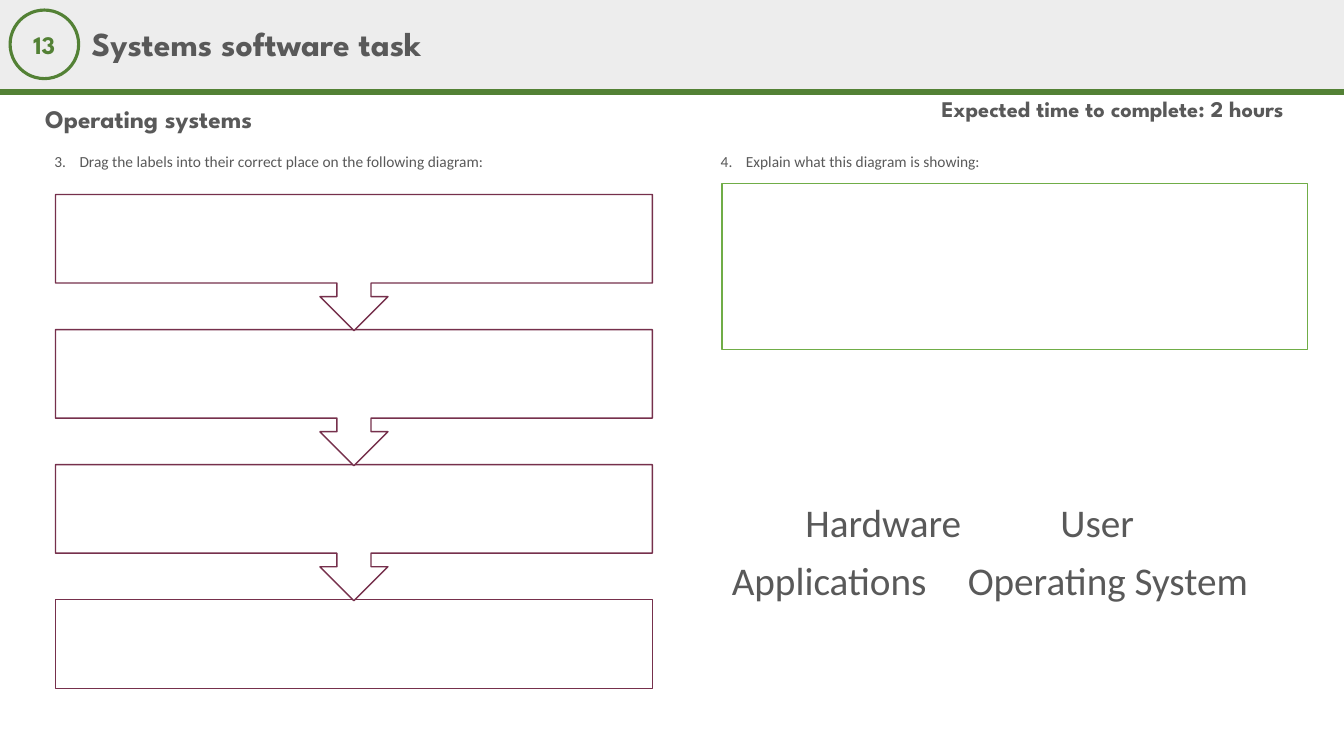
from lxml.etree import SubElement
from pptx import Presentation
from pptx.dml.color import RGBColor
from pptx.enum.shapes import MSO_CONNECTOR, MSO_SHAPE
from pptx.enum.text import MSO_ANCHOR, MSO_AUTO_SIZE, PP_ALIGN
from pptx.oxml.ns import qn
from pptx.util import Inches, Pt

COLOURS = {
    "band": "EDEDED",
    "green": "538135",
    "light green": "70AD47",
    "plum": "76304C",
    "white": "FFFFFF",
    "grey": "595959",
}
HEADING_FONT = "League Spartan"
BODY_FONT = "Calibri"


def colour(name):
    return RGBColor.from_string(COLOURS[name])


def style_text(paragraph, size, font, colour_name, bold=False):
    for span in paragraph.runs:
        span.font.size = Pt(size)
        span.font.name = font
        span.font.bold = bold
        span.font.color.rgb = colour(colour_name)


def add_panel(page, kind, left, top, width, height, fill=None, line=None, weight=1):
    panel = page.shapes.add_shape(
        kind, Inches(left), Inches(top), Inches(width), Inches(height)
    )
    panel.shadow.inherit = False
    if fill:
        panel.fill.solid()
        panel.fill.fore_color.rgb = colour(fill)
    else:
        panel.fill.background()
    if line:
        panel.line.color.rgb = colour(line)
        panel.line.width = Pt(weight)
    else:
        panel.line.fill.background()
    return panel


def add_rule(page, top, width):
    rule = page.shapes.add_connector(
        MSO_CONNECTOR.STRAIGHT, 0, Inches(top), Inches(width), Inches(top)
    )
    rule.line.color.rgb = colour("green")
    rule.line.width = Pt(4.5)
    SubElement(rule._element.spPr, qn("a:effectLst"))


def add_text(page, text, left, top, width, height, wrap=True):
    box = page.shapes.add_textbox(
        Inches(left), Inches(top), Inches(width), Inches(height)
    )
    box.text_frame.word_wrap = wrap
    box.text_frame.text = text
    return box.text_frame


def add_heading(page, text, left, top, width, height, size, anchor=MSO_ANCHOR.MIDDLE):
    frame = add_text(page, text, left, top, width, height)
    frame.vertical_anchor = anchor
    para = frame.paragraphs[0]
    para.line_spacing = 0.9
    style_text(para, size, HEADING_FONT, "grey", bold=True)


def add_question(page, number, text, left, width):
    frame = add_text(page, text, left, 1.46, width, 0.29)
    para = frame.paragraphs[0]
    properties = para._p.get_or_add_pPr()
    properties.set("marL", str(Inches(0.25)))
    properties.set("indent", str(-Inches(0.25)))
    SubElement(
        properties, qn("a:buAutoNum"), type="arabicPeriod", startAt=str(number)
    )
    style_text(para, 11, BODY_FONT, "grey")


def add_label(page, text, left, top, width):
    frame = add_text(page, text, left, top, width, 0.57, wrap=False)
    frame.auto_size = MSO_AUTO_SIZE.SHAPE_TO_FIT_TEXT
    style_text(frame.paragraphs[0], 28, BODY_FONT, "grey")


def add_badge(page, text):
    badge = add_panel(
        page, MSO_SHAPE.OVAL, 0.1, 0.1, 0.68, 0.68, line="green", weight=2.25
    )
    frame = badge.text_frame
    frame.margin_left = frame.margin_right = 0
    frame.vertical_anchor = MSO_ANCHOR.MIDDLE
    frame.text = text
    frame.paragraphs[0].alignment = PP_ALIGN.CENTER
    style_text(frame.paragraphs[0], 18, HEADING_FONT, "green", bold=True)


def add_layer_diagram(page, left, top, width, layers):
    pitch = 1.34
    last = layers - 1
    add_panel(page, MSO_SHAPE.RECTANGLE, left, top + last * pitch, width, 0.88,
              "white", "plum")
    for layer in reversed(range(last)):
        callout = add_panel(page, MSO_SHAPE.UP_ARROW_CALLOUT, left,
                            top + layer * pitch, width, 1.35, "white", "plum")
        callout.rotation = 180


def main():
    deck = Presentation()
    deck.slide_width = Inches(13.33)
    deck.slide_height = Inches(7.5)
    page = deck.slides.add_slide(deck.slide_layouts[6])

    add_panel(page, MSO_SHAPE.RECTANGLE, 0, 0, 13.33, 0.91, fill="band")
    add_rule(page, 0.91, 13.33)
    add_heading(page, "Expected time to complete: 2 hours", 9.24, 0.93, 4.09, 0.4,
                16, MSO_ANCHOR.TOP)
    add_badge(page, "13")
    add_heading(page, "Operating systems", 0.35, 0.99, 5.71, 0.4, 18)
    add_heading(page, "Systems software task", 0.81, 0.09, 10.31, 0.73, 24)

    add_question(
        page, 3, "Drag the labels into their correct place on the following diagram:",
        0.44, 7.45,
    )
    add_layer_diagram(page, 0.55, 1.93, 5.92, 4)

    add_question(page, 4, "Explain what this diagram is showing:", 7.05, 5.67)
    add_panel(page, MSO_SHAPE.RECTANGLE, 7.16, 1.82, 5.81, 1.65, line="light green")

    for text, left, top, width in (
        ("User", 10.42, 4.89, 0.94),
        ("Applications", 7.16, 5.47, 2.16),
        ("Operating System", 9.5, 5.47, 3.01),
        ("Hardware", 7.89, 4.89, 1.76),
    ):
        add_label(page, text, left, top, width)

    deck.save("out.pptx")


if __name__ == "__main__":
    main()
